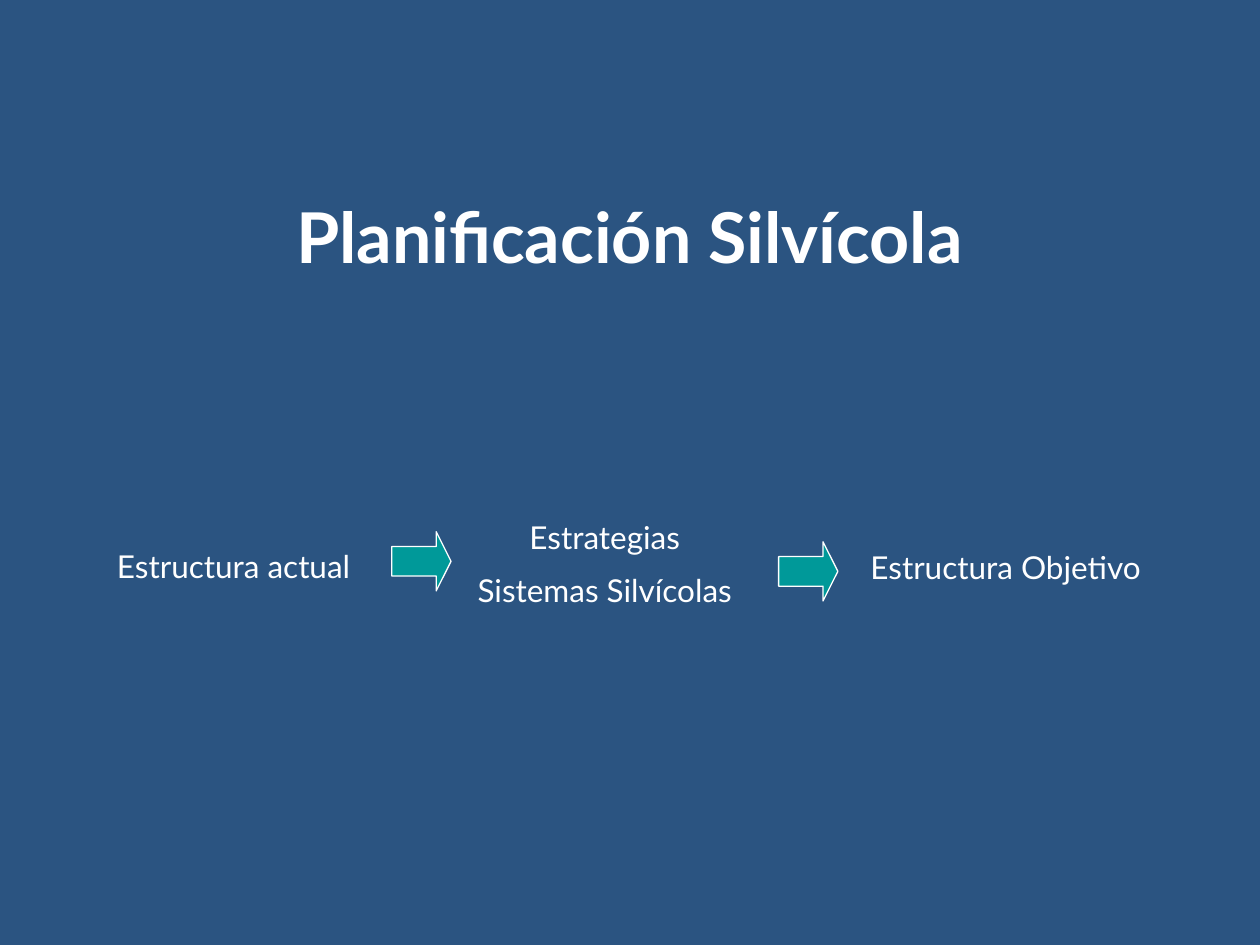
from pptx import Presentation
from pptx.dml.color import RGBColor
from pptx.enum.shapes import MSO_SHAPE
from pptx.enum.text import MSO_ANCHOR, MSO_AUTO_SIZE, PP_ALIGN
from pptx.util import Inches, Pt

BLUE = RGBColor(0x2B, 0x54, 0x81)
TEAL = RGBColor(0x00, 0x99, 0x99)
WHITE = RGBColor(0xFF, 0xFF, 0xFF)
FONT = "Lato"
ARROW_SIZE = 0.47


def format_text(text_frame, size, alignment, bold=False):
    """Style every paragraph, with half a line of space between them."""
    text_frame.word_wrap = True
    for index, paragraph in enumerate(text_frame.paragraphs):
        paragraph.alignment = alignment
        paragraph.space_before = Pt(size / 2 if index else 0)
        for run in paragraph.runs:
            run.font.name = FONT
            run.font.size = Pt(size)
            run.font.bold = bold
            run.font.color.rgb = WHITE


def set_title(slide, text, left, top, width, height):
    """Place and format the title placeholder."""
    title = slide.shapes.title
    title.left, title.top = Inches(left), Inches(top)
    title.width, title.height = Inches(width), Inches(height)
    title.text_frame.text = text
    title.text_frame.vertical_anchor = MSO_ANCHOR.MIDDLE
    title.text_frame.auto_size = MSO_AUTO_SIZE.NONE
    format_text(title.text_frame, 40, PP_ALIGN.CENTER, bold=True)


def add_stage(slide, text, left, top, width, height, alignment=PP_ALIGN.LEFT):
    """Add the label of one planning stage."""
    label = slide.shapes.add_textbox(
        Inches(left), Inches(top), Inches(width), Inches(height))
    label.text_frame.text = text
    label.text_frame.auto_size = MSO_AUTO_SIZE.SHAPE_TO_FIT_TEXT
    format_text(label.text_frame, 18, alignment)


def add_arrow(slide, left, top):
    """Add a block arrow leading to the next stage."""
    arrow = slide.shapes.add_shape(
        MSO_SHAPE.RIGHT_ARROW, Inches(left), Inches(top),
        Inches(ARROW_SIZE), Inches(ARROW_SIZE))
    arrow.adjustments[0] = 0.5
    arrow.adjustments[1] = 0.25
    arrow.shadow.inherit = False
    arrow.fill.solid()
    arrow.fill.fore_color.rgb = TEAL
    arrow.line.color.rgb = WHITE
    arrow.line.width = Pt(0.75)


def main():
    """Build the silvicultural planning slide."""
    presentation = Presentation()
    presentation.slide_width, presentation.slide_height = Inches(10), Inches(7.5)
    slide = presentation.slides.add_slide(presentation.slide_layouts[5])
    slide.background.fill.solid()
    slide.background.fill.fore_color.rgb = BLUE

    set_title(slide, "Planificación Silvícola", 1.12, 1.58, 7.75, 0.58)
    add_stage(slide, "Estructura actual", 0.83, 4.29, 2.12, 0.4)
    add_stage(slide, "Estrategias\nSistemas Silvícolas",
              3.58, 4.06, 2.44, 0.85, PP_ALIGN.CENTER)
    add_stage(slide, "Estructura Objetivo", 6.81, 4.3, 2.52, 0.4)
    for left, top in ((3.11, 4.22), (6.18, 4.3)):
        add_arrow(slide, left, top)

    presentation.save("out.pptx")


if __name__ == "__main__":
    main()
